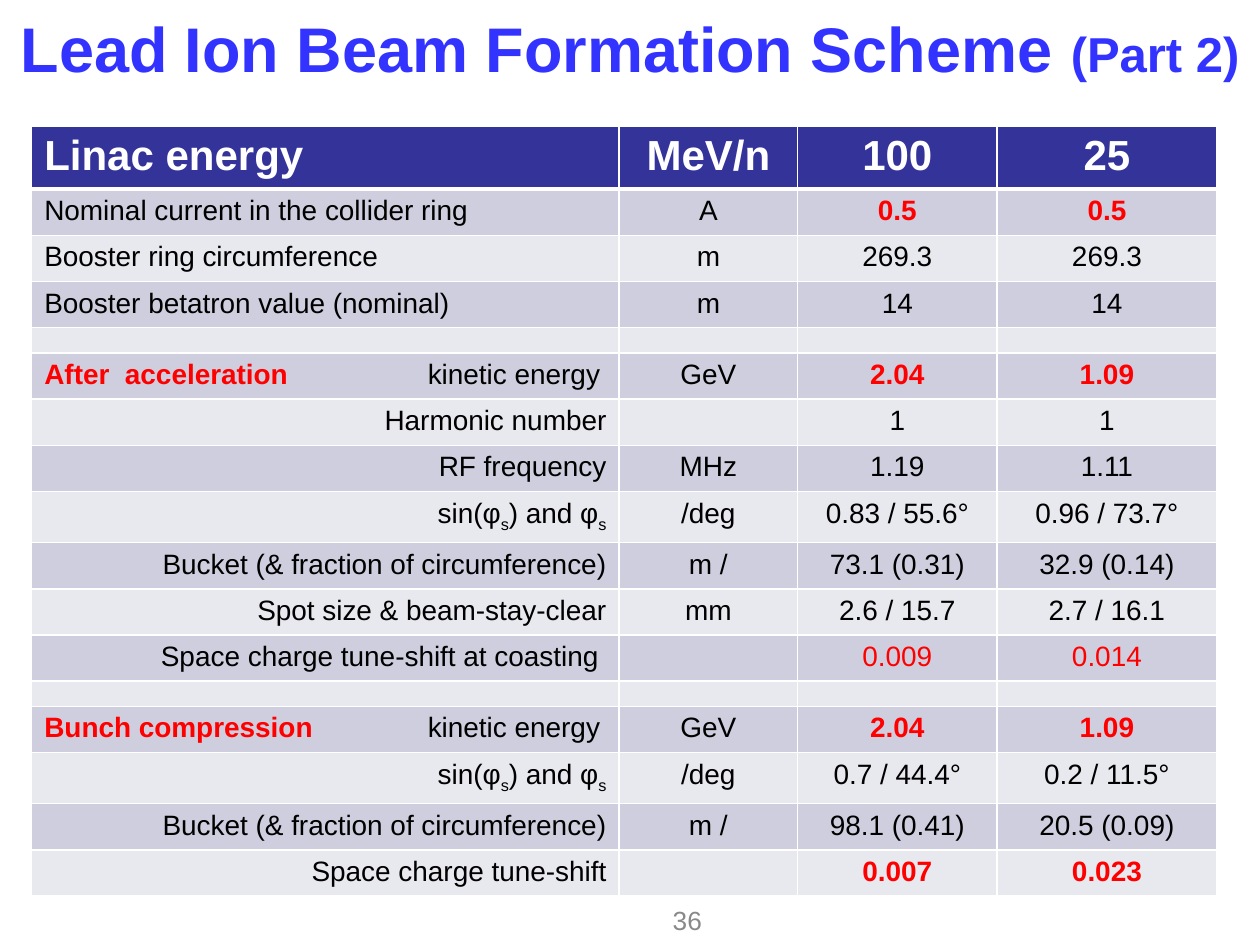
from lxml.etree import SubElement
from pptx import Presentation
from pptx.dml.color import RGBColor
from pptx.enum.text import MSO_ANCHOR, PP_ALIGN
from pptx.oxml.ns import qn
from pptx.util import Cm, Pt

BLACK, RED, WHITE = "000000", "FF0000", "FFFFFF"
HEADER_FILL, DARK_BAND, LIGHT_BAND = "333399", "CECEDE", "E8E8EF"
LEFT, CENTER, RIGHT = PP_ALIGN.LEFT, PP_ALIGN.CENTER, PP_ALIGN.RIGHT

PLAIN = {"size": 16}
SUBSCRIPT = {"size": 16, "baseline": -25000}
RED_PLAIN = {"size": 16, "color": RED}
RED_BOLD = {"size": 16, "color": RED, "bold": True}
HEADING = {"size": 24, "color": WHITE, "bold": True}

PHASE = [("sin(φ", PLAIN), ("s", SUBSCRIPT), (") and φ", PLAIN), ("s", SUBSCRIPT)]
BUCKET = "Bucket (& fraction of circumference)"
KINETIC = ("\tkinetic energy", PLAIN)
SPACER = (LEFT, "", "", "", "", PLAIN)

ROWS = [
    (LEFT, [("Linac energy", HEADING)], "MeV/n", "100", "25", HEADING),
    (LEFT, "Nominal current in the collider ring", "A", "0.5", "0.5", RED_BOLD),
    (LEFT, "Booster ring circumference", "m", "269.3", "269.3", PLAIN),
    (LEFT, "Booster betatron value (nominal)", "m", "14", "14", PLAIN),
    SPACER,
    (LEFT, [("After  acceleration", RED_BOLD), KINETIC], "GeV", "2.04", "1.09", RED_BOLD),
    (RIGHT, "Harmonic number", "", "1", "1", PLAIN),
    (RIGHT, "RF frequency", "MHz", "1.19", "1.11", PLAIN),
    (RIGHT, PHASE, "/deg", "0.83 / 55.6°", "0.96 / 73.7°", PLAIN),
    (RIGHT, BUCKET, "m /", "73.1 (0.31)", "32.9 (0.14)", PLAIN),
    (RIGHT, "Spot size & beam-stay-clear", "mm", "2.6 / 15.7", "2.7 / 16.1", PLAIN),
    (RIGHT, "Space charge tune-shift at coasting ", "", "0.009", "0.014", RED_PLAIN),
    SPACER,
    (LEFT, [("Bunch compression", RED_BOLD), KINETIC], "GeV", "2.04", "1.09", RED_BOLD),
    (RIGHT, PHASE, "/deg", "0.7 / 44.4°", "0.2 / 11.5°", PLAIN),
    (RIGHT, BUCKET, "m /", "98.1 (0.41)", "20.5 (0.09)", PLAIN),
    (RIGHT, "Space charge tune-shift", "", "0.007", "0.023", RED_BOLD),
]
COLUMN_WIDTHS = [11.84, 3.6, 4.02, 4.43]
HEADER_HEIGHT, ROW_HEIGHT, SPACER_HEIGHT = 1.27, 0.93, 0.5
KINETIC_TAB = 7.73


def color_of(code):
    return RGBColor.from_string(code)


def spans_of(content, style):
    if isinstance(content, list):
        return content
    return [(content, style)] if content else []


class SlideWriter:
    font_name = "Arial"

    def __init__(self, page):
        self.page = page

    def add_span(self, para, text, size, color=BLACK, bold=False, baseline=None):
        span = para.add_run()
        span.text = text
        span.font.name = self.font_name
        span.font.size = Pt(size)
        span.font.bold = bold
        span.font.color.rgb = color_of(color)
        if baseline:
            span._r.get_or_add_rPr().set("baseline", str(baseline))

    def add_text(self, left, top, width, height, align, spans):
        box = self.page.shapes.add_textbox(Cm(left), Cm(top), Cm(width), Cm(height))
        frame = box.text_frame
        frame.word_wrap = True
        frame.vertical_anchor = MSO_ANCHOR.MIDDLE
        para = frame.paragraphs[0]
        para.alignment = align
        for text, style in spans:
            self.add_span(para, text, **style)

    def set_borders(self, cell, top, bottom):
        properties = cell._tc.get_or_add_tcPr()
        for side, width in (("L", 1), ("R", 1), ("T", top), ("B", bottom)):
            line = SubElement(properties, qn(f"a:ln{side}"), w=str(Pt(width)))
            fill = SubElement(line, qn("a:solidFill"))
            SubElement(fill, qn("a:srgbClr"), val=WHITE)

    def fill_cell(self, cell, align, spans, empty_size):
        para = cell.text_frame.paragraphs[0]
        para.alignment = align
        if not spans:
            SubElement(para._p, qn("a:endParaRPr"), sz=str(empty_size * 100))
        if KINETIC in spans:
            tabs = SubElement(para._p.get_or_add_pPr(), qn("a:tabLst"))
            SubElement(tabs, qn("a:tab"), pos=str(Cm(KINETIC_TAB)), algn="l")
        for text, style in spans:
            self.add_span(para, text, **style)

    def add_table(self, left, top, widths, rows):
        heights = [SPACER_HEIGHT if row is SPACER else ROW_HEIGHT for row in rows]
        heights[0] = HEADER_HEIGHT
        table = self.page.shapes.add_table(
            len(rows), len(widths), Cm(left), Cm(top), Cm(sum(widths)), Cm(sum(heights))
        ).table
        table.horz_banding = False
        for column, width in zip(table.columns, widths):
            column.width = Cm(width)
        for index, (row, height) in enumerate(zip(rows, heights)):
            table.rows[index].height = Cm(height)
            label_align, label, unit, *values, style = row
            unit_style = HEADING if index == 0 else PLAIN
            contents = [spans_of(label, PLAIN), spans_of(unit, unit_style)]
            contents += [spans_of(value, style) for value in values]
            band = DARK_BAND if index % 2 else LIGHT_BAND
            for number, spans in enumerate(contents):
                cell = table.cell(index, number)
                self.set_borders(cell, 3 if index == 1 else 1, 3 if index == 0 else 1)
                cell.fill.solid()
                cell.fill.fore_color.rgb = color_of(HEADER_FILL if index == 0 else band)
                align = CENTER if number else label_align
                self.fill_cell(cell, align, spans, 6 if row is SPACER else 16)


def main():
    deck = Presentation()
    deck.slide_width, deck.slide_height = Cm(25.4), Cm(19.05)
    writer = SlideWriter(deck.slides.add_slide(deck.slide_layouts[6]))
    title_style = {"color": "3333FF", "bold": True}
    writer.add_text(0, 0, 25.4, 1.9, CENTER, [
        ("Lead Ion Beam Formation Scheme ", {"size": 36, **title_style}),
        ("(Part 2)", {"size": 28, **title_style}),
    ])
    writer.add_table(0.64, 2.54, COLUMN_WIDTHS, ROWS)
    writer.add_text(10.6, 18.03, 3.8, 1.02, RIGHT, [("36", {"size": 15, "color": "898989"})])
    deck.save("out.pptx")


if __name__ == "__main__":
    main()
